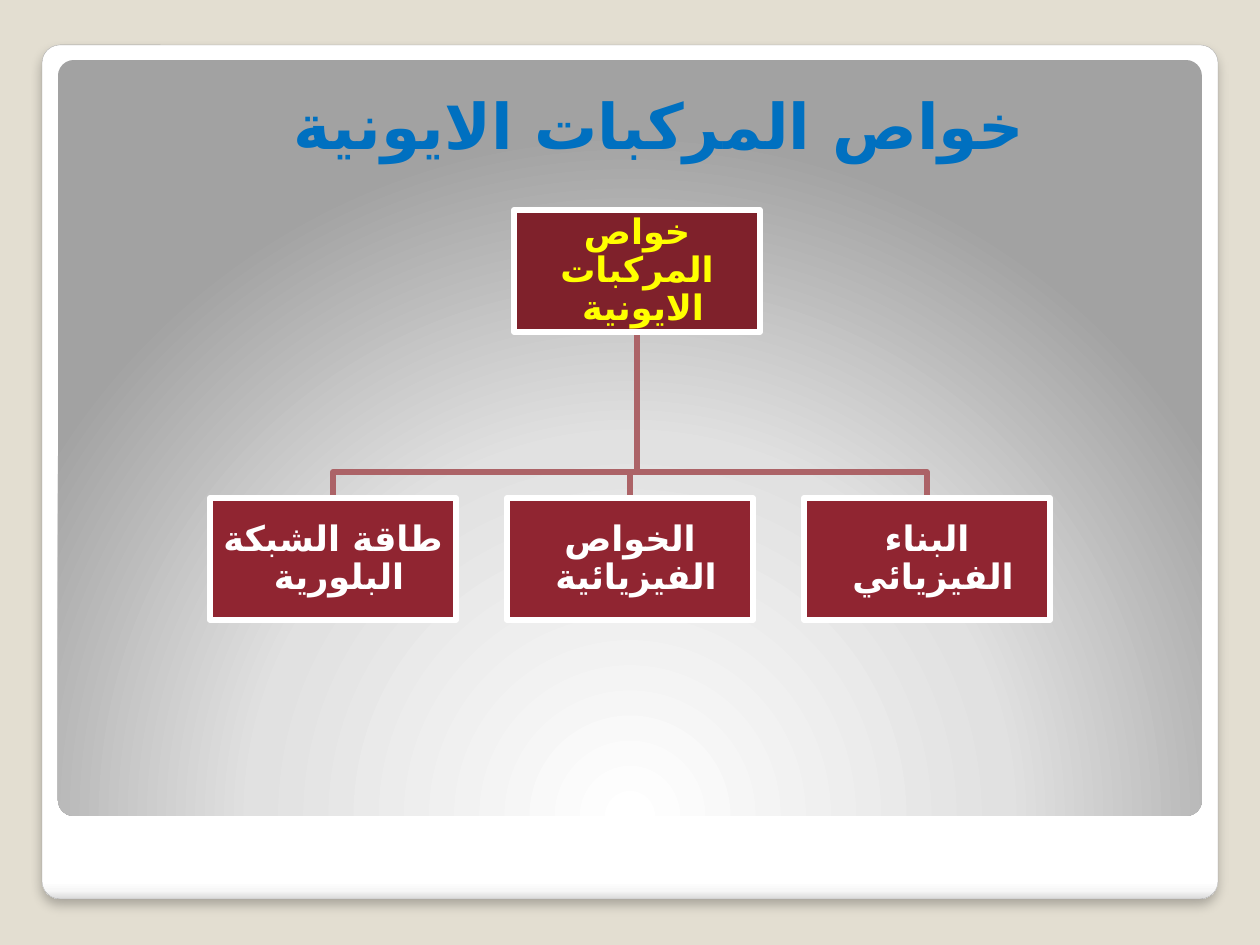
from dataclasses import dataclass

from lxml.etree import SubElement
from pptx import Presentation
from pptx.dml.color import RGBColor
from pptx.enum.shapes import MSO_SHAPE as Preset
from pptx.enum.text import MSO_ANCHOR as Anchor, MSO_AUTO_SIZE as AutoSize, PP_ALIGN as Align
from pptx.oxml import parse_xml
from pptx.oxml.ns import nsdecls, qn
from pptx.util import Emu, Pt

PX = 914400 / 126
FONT = "DejaVu Sans"
SAND = RGBColor(0xE3, 0xDE, 0xD1)
WHITE = RGBColor(0xFF, 0xFF, 0xFF)
OFF_WHITE = RGBColor(0xF7, 0xF7, 0xF7)
PALE_GREY = RGBColor(0xE1, 0xE1, 0xE1)
EDGE_GREY = RGBColor(0xDA, 0xDA, 0xDA)
MID_GREY = RGBColor(0xA2, 0xA2, 0xA2)
LINE_GREY = RGBColor(0xA4, 0xA4, 0xA4)
BLACK = RGBColor(0, 0, 0)
BLUE = RGBColor(0x00, 0x70, 0xC0)
YELLOW = RGBColor(0xFF, 0xFF, 0x00)
DARK_RED = RGBColor(0x7F, 0x21, 0x2B)
RED = RGBColor(0x90, 0x25, 0x31)
ROSE = RGBColor(0xAC, 0x63, 0x67)

BOX_WIDTH, BOX_HEIGHT = 246, 122
ROOT_LEFT, ROOT_TOP = 514, 210
BRANCH_LEFT, BRANCH_TOP, BRANCH_PITCH = 210, 498, 297
BUS_Y = 472
STROKE = Pt(3.35)
LINEAR = '<a:lin ang="5400000" scaled="0"/>'
RADIAL = '<a:path path="circle"><a:fillToRect l="50000" t="175000" r="50000" b="-75000"/></a:path>'


@dataclass(frozen=True)
class Panel:
    left: int
    top: int
    width: int
    height: int
    stops: tuple
    direction: str


@dataclass(frozen=True)
class Box:
    left: int
    top: int
    label: str
    fill: RGBColor
    ink: RGBColor

    @property
    def center(self) -> int:
        return self.left + BOX_WIDTH // 2


def px(*lengths: int) -> list[Emu]:
    return [Emu(round(length * PX)) for length in lengths]


def write_text(frame, text: str, size: int, ink: RGBColor, anchor: Anchor) -> None:
    frame.text = text
    frame.word_wrap = True
    frame.auto_size = AutoSize.NONE
    frame.vertical_anchor = anchor
    paragraph = frame.paragraphs[0]
    paragraph.alignment = Align.CENTER
    paragraph._p.get_or_add_pPr().set("rtl", "1")
    font = paragraph.runs[0].font
    font.name, font.size, font.bold = FONT, Pt(size), True
    font.color.rgb = ink
    SubElement(font._element, qn("a:cs")).set("typeface", FONT)


def draw_panel(shapes, panel: Panel):
    shape = shapes.add_shape(
        Preset.ROUNDED_RECTANGLE, *px(panel.left, panel.top, panel.width, panel.height))
    shape.adjustments[0] = 0.021
    shape.shadow.inherit = False
    shape.line.fill.background()
    stops = "".join(
        f'<a:gs pos="{percent * 1000}"><a:srgbClr val="{color}"/></a:gs>'
        for percent, color in panel.stops)
    shape._element.spPr.find(qn("a:prstGeom")).addnext(parse_xml(
        f'<a:gradFill {nsdecls("a")} rotWithShape="1">'
        f'<a:gsLst>{stops}</a:gsLst>{panel.direction}</a:gradFill>'))
    return shape


def frame_card(card) -> None:
    card.line.color.rgb = LINE_GREY
    card.line.width = Pt(0.16)
    card._element.spPr.find(qn("a:effectLst")).append(parse_xml(
        f'<a:outerShdw {nsdecls("a")} blurRad="{Pt(6)}" dist="{Pt(4)}" dir="5400000" '
        f'algn="t" rotWithShape="0"><a:srgbClr val="{BLACK}"><a:alpha val="25000"/>'
        '</a:srgbClr></a:outerShdw>'))


def draw_branch(shapes, parent: Box, child: Box) -> None:
    builder = shapes.build_freeform(parent.center, parent.top + BOX_HEIGHT, scale=PX)
    builder.add_line_segments(
        [(parent.center, BUS_Y), (child.center, BUS_Y), (child.center, child.top)],
        close=False)
    branch = builder.convert_to_shape()
    branch.shadow.inherit = False
    branch.fill.background()
    branch.line.color.rgb = ROSE
    branch.line.width = STROKE


def draw_box(shapes, box: Box) -> None:
    shape = shapes.add_shape(
        Preset.RECTANGLE, *px(box.left, box.top, BOX_WIDTH, BOX_HEIGHT))
    shape.shadow.inherit = False
    shape.fill.solid()
    shape.fill.fore_color.rgb = box.fill
    shape.line.color.rgb = WHITE
    shape.line.width = STROKE
    frame = shape.text_frame
    frame.margin_left, frame.margin_top, frame.margin_right, frame.margin_bottom = px(1, 1, 1, 1)
    write_text(frame, box.label, 20, box.ink, Anchor.MIDDLE)
    frame.paragraphs[0].line_spacing = 0.9


def main() -> None:
    deck = Presentation()
    deck.slide_width, deck.slide_height = px(1260, 945)
    slide = deck.slides.add_slide(deck.slide_layouts[5])
    slide.background.fill.solid()
    slide.background.fill.fore_color.rgb = SAND
    shapes = slide.shapes

    frame_card(draw_panel(shapes, Panel(
        42, 45, 1176, 854,
        ((0, WHITE), (98, WHITE), (99, OFF_WHITE), (100, EDGE_GREY)), LINEAR)))
    draw_panel(shapes, Panel(
        58, 60, 1144, 756, ((0, WHITE), (55, PALE_GREY), (100, MID_GREY)), RADIAL))

    title = shapes.title
    title.left, title.top, title.width, title.height = px(84, 23, 1128, 145)
    write_text(title.text_frame, "خواص المركبات الايونية ", 36, BLUE, Anchor.BOTTOM)
    shapes._spTree.append(title._element)

    root = Box(ROOT_LEFT, ROOT_TOP, "خواص المركبات الايونية ", DARK_RED, YELLOW)
    labels = ("طاقة الشبكة البلورية ", "الخواص الفيزيائية ", "البناء الفيزيائي ")
    properties = [
        Box(BRANCH_LEFT + index * BRANCH_PITCH, BRANCH_TOP, label, RED, WHITE)
        for index, label in enumerate(labels)]
    for child in reversed(properties):
        draw_branch(shapes, root, child)
    for box in (root, *properties):
        draw_box(shapes, box)

    deck.save("out.pptx")


if __name__ == "__main__":
    main()
